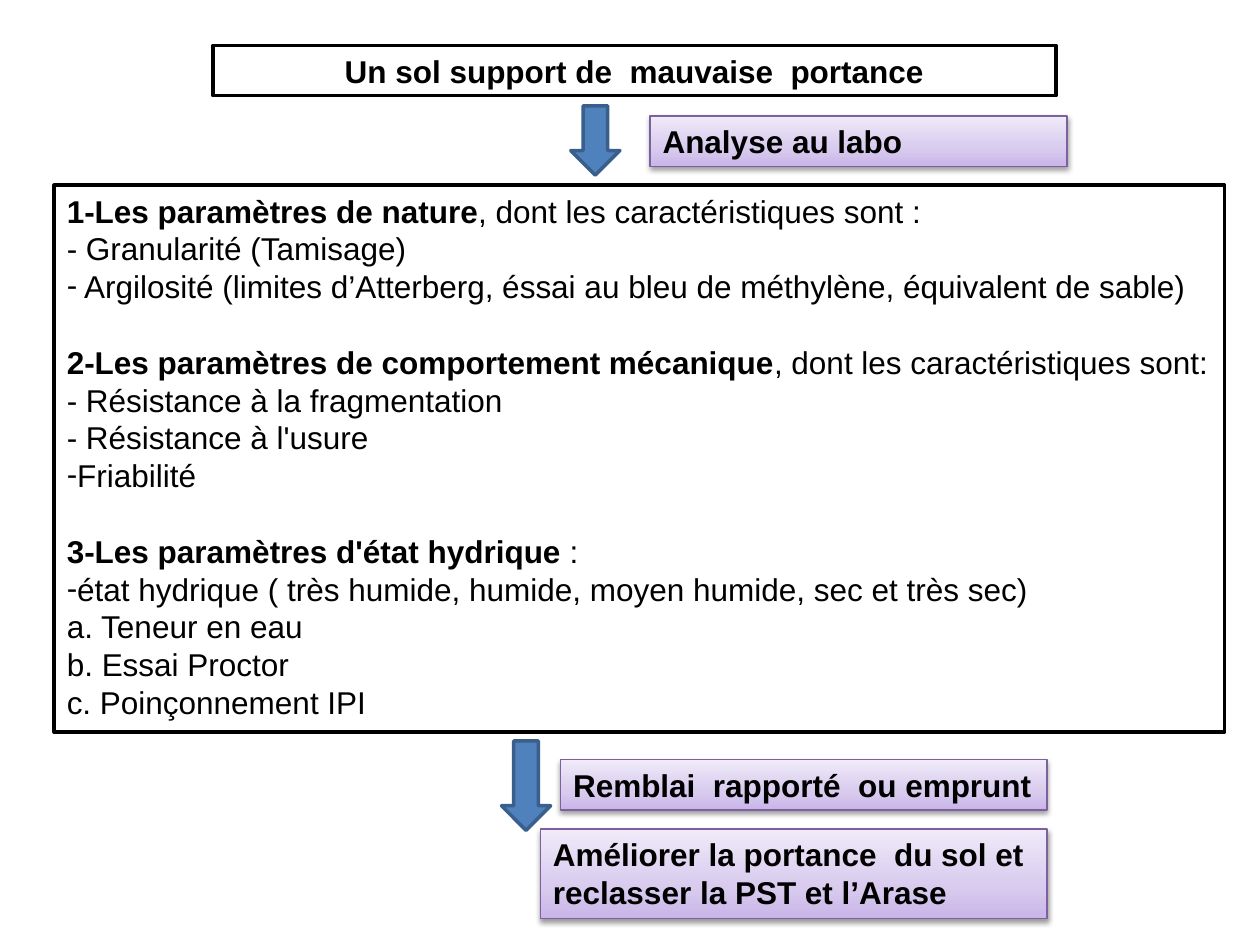
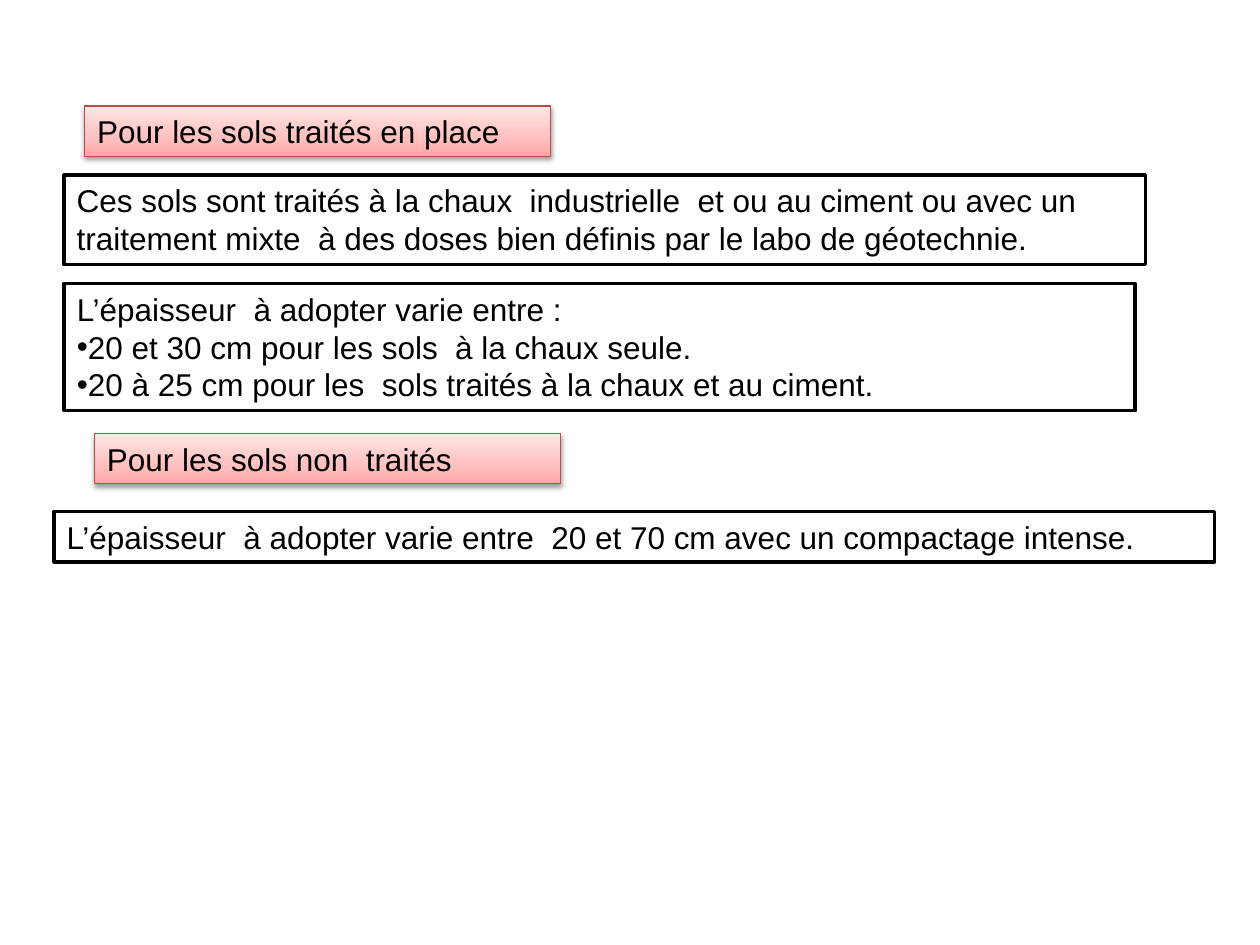
from dataclasses import dataclass

from pptx import Presentation
from pptx.dml.color import RGBColor
from pptx.enum.shapes import MSO_SHAPE
from pptx.enum.text import MSO_ANCHOR, MSO_AUTO_SIZE, PP_ALIGN
from pptx.oxml import parse_xml
from pptx.oxml.ns import nsdecls, qn
from pptx.shapes.autoshape import Shape
from pptx.slide import Slide
from pptx.text.text import _Paragraph as Paragraph
from pptx.util import Inches, Pt

BLACK = RGBColor(0x00, 0x00, 0x00)
WHITE = RGBColor(0xFF, 0xFF, 0xFF)
ARROW_FILL = RGBColor(0x4F, 0x81, 0xBD)
ARROW_LINE = RGBColor(0x3A, 0x5F, 0x8C)
FONT = "Arial"
FONT_SIZE = Pt(18)
SECTION_GAP = Pt(21.6)
TITLE, BODY = 0, 1


@dataclass(frozen=True)
class Style:
    line: RGBColor
    line_width: float
    gradient: tuple[tuple[int, RGBColor], ...] = ()


FRAME = Style(BLACK, 2)
PURPLE = Style(RGBColor(0x7D, 0x60, 0xA0), 0.75, (
    (0, RGBColor(0xC9, 0xB5, 0xE8)),
    (35, RGBColor(0xD8, 0xCB, 0xEE)),
    (100, RGBColor(0xF0, 0xEA, 0xF9)),
))
RED = Style(RGBColor(0xBF, 0x4C, 0x48), 0.75, (
    (0, RGBColor(0xFF, 0xA6, 0xA5)),
    (35, RGBColor(0xFF, 0xC0, 0xBF)),
    (100, RGBColor(0xFF, 0xE7, 0xE7)),
))


@dataclass(frozen=True)
class Line:
    text: str = ""
    lead: str = ""  # bold opening words
    bullet: str = ""
    new_section: bool = False


@dataclass(frozen=True)
class Box:
    left: float
    top: float
    width: float
    height: float
    style: Style
    lines: tuple[Line, ...]
    placeholder: int | None = None
    align: PP_ALIGN = PP_ALIGN.LEFT


@dataclass(frozen=True)
class Arrow:
    left: float
    top: float
    height: float
    width: float = 0.39


SOIL_BOXES = (
    Box(0.43, 1.47, 9.29, 4.34, FRAME, (
        Line(", dont les caractéristiques sont :", "1-Les paramètres de nature"),
        Line("- Granularité (Tamisage)"),
        Line(" Argilosité (limites d’Atterberg, éssai au bleu de méthylène, "
             "équivalent de sable)", bullet="-"),
        Line(", dont les caractéristiques sont:",
             "2-Les paramètres de comportement mécanique", new_section=True),
        Line("- Résistance à la fragmentation"),
        Line("- Résistance à l'usure"),
        Line("Friabilité", bullet="-"),
        Line(":", "3-Les paramètres d'état hydrique ", new_section=True),
        Line("état hydrique ( très humide, humide, moyen humide, sec et très sec)",
             bullet="-"),
        Line("a. Teneur en eau"),
        Line("b. Essai Proctor"),
        Line("c. Poinçonnement IPI"),
    ), BODY),
    Box(1.69, 0.36, 6.69, 0.4, FRAME,
        (Line(lead="Un sol support de  mauvaise  portance"),), TITLE, PP_ALIGN.CENTER),
    Box(5.16, 0.92, 3.31, 0.4, PURPLE, (Line(lead="Analyse au labo"),)),
    Box(4.45, 6.03, 3.86, 0.4, PURPLE, (Line(lead="Remblai  rapporté  ou emprunt"),)),
    Box(4.29, 6.58, 4.02, 0.71, PURPLE,
        (Line(lead="Améliorer la portance  du sol et reclasser la PST et l’Arase"),)),
)
SOIL_ARROWS = (Arrow(4.53, 0.84, 0.55), Arrow(3.98, 5.88, 0.71))

TREATMENT_BOXES = (
    Box(0.67, 0.84, 3.7, 0.4, RED, (Line("Pour les sols traités en place"),), TITLE),
    Box(0.51, 1.39, 8.58, 0.71, FRAME, (
        Line("Ces sols sont traités à la chaux  industrielle  et ou au ciment ou avec un "
             "traitement mixte  à des doses bien définis par le labo de géotechnie."),
    )),
    Box(0.51, 2.25, 8.5, 1.01, FRAME, (
        Line("L’épaisseur  à adopter varie entre :"),
        Line("20 et 30 cm pour les sols  à la chaux seule.", bullet="•"),
        Line("20 à 25 cm pour les  sols traités à la chaux et au ciment.", bullet="•"),
    ), BODY),
    Box(0.75, 3.44, 3.7, 0.4, RED, (Line("Pour les sols non  traités"),)),
    Box(0.43, 4.06, 9.21, 0.4, FRAME, (
        Line("L’épaisseur  à adopter varie entre  20 et 70 cm avec un compactage intense."),
    )),
)


def fill_gradient(shape: Shape, stops: tuple[tuple[int, RGBColor], ...]) -> None:
    shape.fill.gradient()
    shape.fill.gradient_angle = 90
    stop_list = shape.element.spPr.find(f".//{qn('a:gsLst')}")
    for old_stop in list(stop_list):
        stop_list.remove(old_stop)
    for position, color in stops:
        stop_list.append(parse_xml(
            f'<a:gs {nsdecls("a")} pos="{position * 1000}">'
            f'<a:srgbClr val="{color}"/></a:gs>'))


def add_drop_shadow(shape: Shape) -> None:
    effects = shape.element.spPr.find(qn("a:effectLst"))
    effects.append(parse_xml(
        f'<a:outerShdw {nsdecls("a")} blurRad="{Pt(3.1)}" dist="{Pt(1.6)}" '
        'dir="5400000" rotWithShape="0"><a:srgbClr val="000000">'
        '<a:alpha val="38000"/></a:srgbClr></a:outerShdw>'))


def apply_style(shape: Shape, style: Style) -> None:
    shape.shadow.inherit = False
    if style.gradient:
        fill_gradient(shape, style.gradient)
        add_drop_shadow(shape)
    else:
        shape.fill.solid()
        shape.fill.fore_color.rgb = WHITE
    shape.line.color.rgb = style.line
    shape.line.width = Pt(style.line_width)


def set_bullet(paragraph: Paragraph, bullet: str) -> None:
    properties = paragraph._p.get_or_add_pPr()
    properties.set("marL", "0")
    properties.set("indent", "0")
    if bullet:
        properties.append(parse_xml(f'<a:buFont {nsdecls("a")} typeface="{FONT}"/>'))
        properties.append(parse_xml(f'<a:buChar {nsdecls("a")} char="{bullet}"/>'))
    else:
        properties.append(parse_xml(f'<a:buNone {nsdecls("a")}/>'))


def add_run(paragraph: Paragraph, text: str, bold: bool) -> None:
    run = paragraph.add_run()
    run.text = text
    run.font.name = FONT
    run.font.size = FONT_SIZE
    run.font.bold = bold
    run.font.color.rgb = BLACK


def write_lines(shape: Shape, box: Box) -> None:
    frame = shape.text_frame
    frame.word_wrap = True
    frame.auto_size = MSO_AUTO_SIZE.NONE
    frame.vertical_anchor = MSO_ANCHOR.TOP
    for number, line in enumerate(box.lines):
        paragraph = frame.add_paragraph() if number else frame.paragraphs[0]
        set_bullet(paragraph, line.bullet)
        paragraph.alignment = box.align
        paragraph.space_before = SECTION_GAP if line.new_section else Pt(0)
        for text, bold in ((line.lead, True), (line.text, False)):
            if text:
                add_run(paragraph, text, bold)


def add_box(slide: Slide, box: Box) -> None:
    place = [Inches(n) for n in (box.left, box.top, box.width, box.height)]
    if box.placeholder is None:
        shape = slide.shapes.add_shape(MSO_SHAPE.RECTANGLE, *place)
    else:
        shape = slide.placeholders[box.placeholder]
        shape.left, shape.top, shape.width, shape.height = place
    apply_style(shape, box.style)
    write_lines(shape, box)


def add_arrow(slide: Slide, arrow: Arrow) -> None:
    shape = slide.shapes.add_shape(
        MSO_SHAPE.DOWN_ARROW, Inches(arrow.left), Inches(arrow.top),
        Inches(arrow.width), Inches(arrow.height))
    shape.shadow.inherit = False
    shape.fill.solid()
    shape.fill.fore_color.rgb = ARROW_FILL
    shape.line.color.rgb = ARROW_LINE
    shape.line.width = Pt(2)


def main() -> None:
    presentation = Presentation()
    presentation.slide_width = Inches(10)
    presentation.slide_height = Inches(7.5)
    title_and_content = presentation.slide_layouts[1]
    for boxes, arrows in ((SOIL_BOXES, SOIL_ARROWS), (TREATMENT_BOXES, ())):
        slide = presentation.slides.add_slide(title_and_content)
        for arrow in arrows:
            add_arrow(slide, arrow)
        for box in boxes:
            add_box(slide, box)
    presentation.save("out.pptx")


if __name__ == "__main__":
    main()
